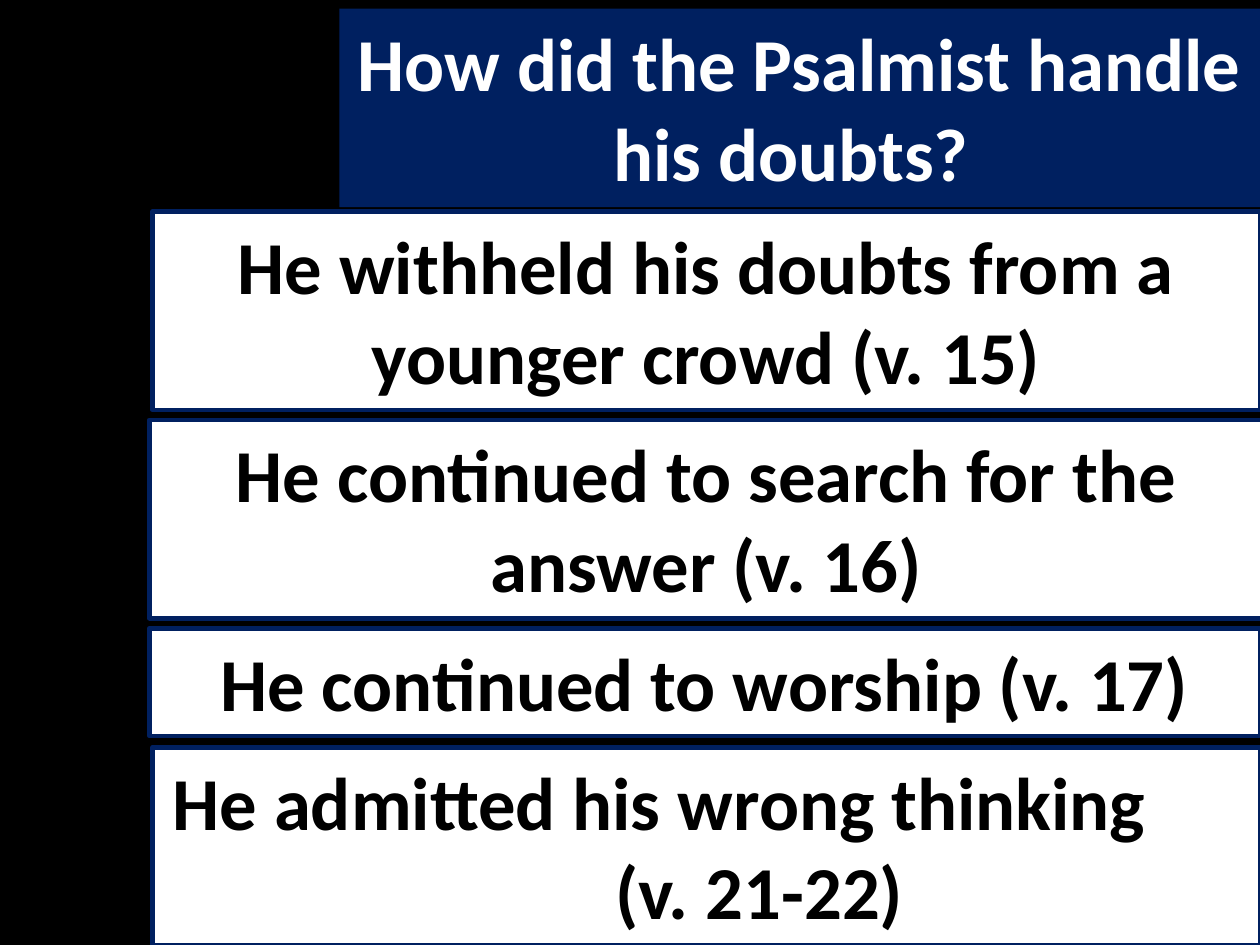
from pptx import Presentation
from pptx import util as u
from pptx.dml.color import RGBColor
from pptx.enum import shapes, text

COLOURS = {"black": "000000", "navy": "002060", "white": "FFFFFF"}

ANSWERS = [
    ("He withheld his doubts from a younger crowd (v. 15)", 2.31, 3.2, 16.74, 3),
    ("He continued to search for the answer (v. 16)", 2.26, 6.35, 16.84, 3),
    ("He continued to worship (v. 17)", 2.26, 9.5, 16.79, 1.63),
]


class SlideBuilder:
    font_name = "Calibri"
    font_size = u.Pt(32)
    line_width = u.Pt(2)

    def __init__(self, presentation):
        self.slide = presentation.slides.add_slide(presentation.slide_layouts[5])

    def colour(self, name):
        return RGBColor.from_string(COLOURS[name])

    def fill(self, target, name):
        target.fill.solid()
        target.fill.fore_color.rgb = self.colour(name)

    def background(self, name):
        self.fill(self.slide.background, name)

    def add_words(self, shape, lines, colour):
        frame = shape.text_frame
        frame.word_wrap = True
        frame.auto_size = text.MSO_AUTO_SIZE.SHAPE_TO_FIT_TEXT
        frame.vertical_anchor = text.MSO_ANCHOR.TOP
        paragraph = frame.paragraphs[0]
        paragraph.alignment = text.PP_ALIGN.CENTER
        for index, line in enumerate(lines):
            if index:
                paragraph.add_line_break()
            run = paragraph.add_run()
            run.text = line
            run.font.name = self.font_name
            run.font.size = self.font_size
            run.font.bold = True
            run.font.color.rgb = self.colour(colour)
        return paragraph

    def title(self, words, left, top, width, height):
        shape = self.slide.shapes.title
        shape.left, shape.top = u.Cm(left), u.Cm(top)
        shape.width, shape.height = u.Cm(width), u.Cm(height)
        self.fill(shape, "navy")
        self.add_words(shape, [words], "white")

    def answer(self, lines, left, top, width, height):
        shape = self.slide.shapes.add_shape(
            shapes.MSO_SHAPE.RECTANGLE,
            u.Cm(left), u.Cm(top), u.Cm(width), u.Cm(height))
        shape.shadow.inherit = False
        self.fill(shape, "white")
        shape.line.color.rgb = self.colour("navy")
        shape.line.width = self.line_width
        return self.add_words(shape, lines, "black")

    def hanging_answer(self, lines, left, top, width, height, first, rest):
        paragraph = self.answer(lines, left, top, width, height)
        paragraph.alignment = text.PP_ALIGN.LEFT
        properties = paragraph._p.get_or_add_pPr()
        properties.set("marL", str(u.Cm(rest)))
        properties.set("indent", str(u.Cm(first - rest)))


def main():
    presentation = Presentation()
    presentation.slide_width = u.Cm(19.05)
    presentation.slide_height = u.Cm(14.29)
    builder = SlideBuilder(presentation)
    builder.background("black")
    builder.title("How did the Psalmist handle his doubts? ", 5.13, 0.13, 13.92, 3)
    for words, left, top, width, height in ANSWERS:
        builder.answer([words], left, top, width, height)
    builder.hanging_answer(
        ["He admitted his wrong thinking", "(v. 21-22)"],
        2.31, 11.3, 16.74, 3, first=0.05, rest=6.75)
    presentation.save("out.pptx")


if __name__ == "__main__":
    main()
